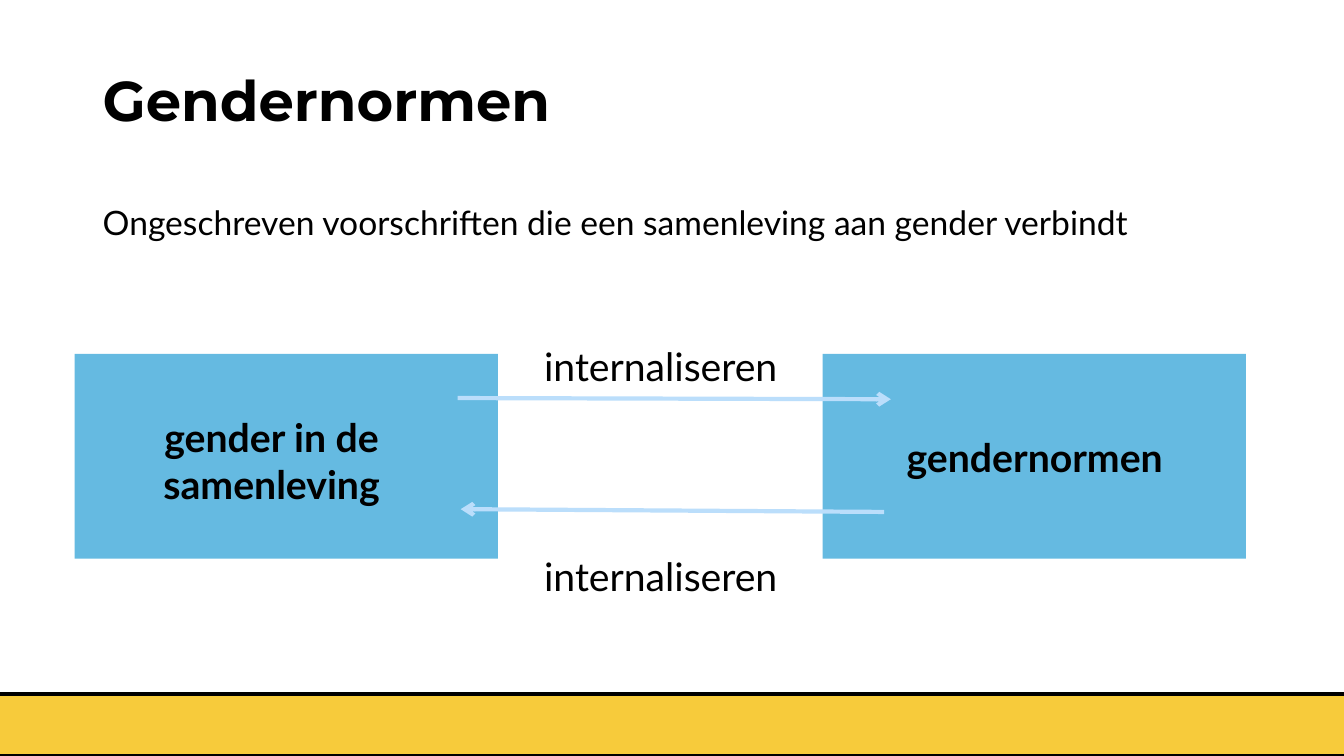
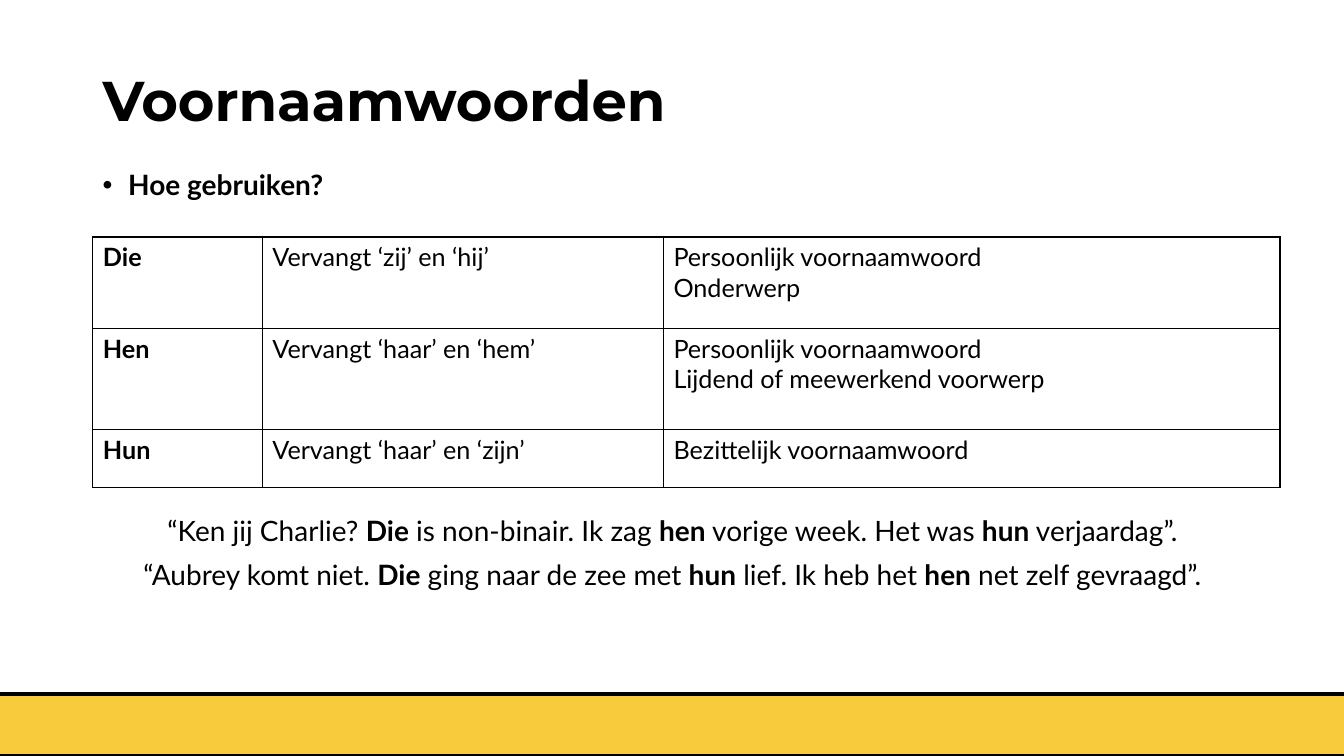
from lxml.etree import SubElement
from pptx import Presentation
from pptx.dml.color import RGBColor
from pptx.enum.shapes import MSO_CONNECTOR, MSO_SHAPE
from pptx.enum.text import MSO_ANCHOR, PP_ALIGN
from pptx.oxml.ns import qn
from pptx.util import Cm, Pt

THEME = {
    "black": RGBColor.from_string("000000"),
    "yellow": RGBColor.from_string("F7CB3B"),
    "blue": RGBColor.from_string("65BAE1"),
    "pale": RGBColor.from_string("BBDEFB"),
    "title": {"name": "Montserrat", "size": Pt(40), "bold": True},
    "lead": {"name": "Lato", "size": Pt(24), "bold": False},
    "body": {"name": "Lato", "size": Pt(20), "bold": False},
    "label": {"name": "Lato", "size": Pt(28), "bold": False},
    "cell": {"name": "Lato", "size": Pt(18), "bold": False},
}


def write(tf, lines, style, **paragraph_format):
    tf.word_wrap = True
    for i, line in enumerate(lines):
        p = tf.paragraphs[0] if i == 0 else tf.add_paragraph()
        for key, value in paragraph_format.items():
            if i or key != "space_before":
                setattr(p, key, value)
        for j, part in enumerate(line.split("*")):
            if part:
                r = p.add_run()
                r.text = part
                for key, value in THEME[style].items():
                    setattr(r.font, key, value)
                r.font.bold = THEME[style]["bold"] or j % 2 == 1
                r.font.color.rgb = THEME["black"]


def add_text(s, box, lines, style, anchor=MSO_ANCHOR.TOP, **paragraph_format):
    tf = s.shapes.add_textbox(*map(Cm, box)).text_frame
    tf.vertical_anchor = anchor
    write(tf, lines, style, **paragraph_format)
    return tf


prs = Presentation()
prs.slide_width, prs.slide_height = Cm(33.87), Cm(19.05)
left, width = 2.34, 29.21

slides = []
for title in ("Gendernormen", "Voornaamwoorden"):
    s = prs.slides.add_slide(prs.slide_layouts[6])
    band = s.shapes.add_shape(MSO_SHAPE.RECTANGLE, Cm(-0.94), Cm(17.48), Cm(35.74), Cm(1.57))
    band.shadow.inherit = False
    band.fill.solid()
    band.fill.fore_color.rgb = THEME["yellow"]
    band.line.color.rgb = THEME["black"]
    band.line.width = Pt(3)
    add_text(s, (left, 1.02, width, 3.18), [title], "title", MSO_ANCHOR.MIDDLE, line_spacing=0.9)
    slides.append(s)
norms, pronouns = slides

add_text(norms, (left, 5.08, width, 1.4),
         ["Ongeschreven voorschriften die een samenleving aan gender verbindt"],
         "lead", line_spacing=0.9)

for x in (1.88, 20.73):
    sp = norms.shapes.add_shape(MSO_SHAPE.RECTANGLE, Cm(x), Cm(8.92), Cm(10.67), Cm(5.16))
    sp.shadow.inherit = False
    sp.fill.solid()
    sp.fill.fore_color.rgb = THEME["blue"]
    sp.line.fill.background()

for x1, y1, x2, y2 in ((11.53, 10.03, 22.45, 10.06), (22.28, 12.9, 11.61, 12.83)):
    arrow = norms.shapes.add_connector(MSO_CONNECTOR.STRAIGHT, Cm(x1), Cm(y1), Cm(x2), Cm(y2))
    arrow.line.color.rgb = THEME["pale"]
    arrow.line.width = Pt(3)
    SubElement(arrow.line._get_or_add_ln(), qn("a:tailEnd"), type="arrow")
    SubElement(arrow._element.spPr, qn("a:effectLst"))

for box, text in (
    ((1.98, 10.29, 9.73, 2.64), "*gender in de samenleving*"),
    ((21.21, 10.8, 9.73, 1.45), "*gendernormen*"),
    ((12.93, 8.51, 7.44, 1.45), "internaliseren"),
    ((12.93, 13.79, 7.44, 1.45), "internaliseren"),
):
    add_text(norms, box, [text], "label", alignment=PP_ALIGN.CENTER)

tf = add_text(pronouns, (left, 4.19, width, 1.2), ["*Hoe gebruiken?*"], "body", line_spacing=0.9)
pPr = tf.paragraphs[0]._p.get_or_add_pPr()
pPr.set("marL", str(Cm(0.64)))
pPr.set("indent", str(Cm(-0.64)))
SubElement(pPr, qn("a:buFont"), typeface="Arial")
SubElement(pPr, qn("a:buChar"), char="•")

rows = [
    ("*Die*", "Vervangt ‘zij’ en ‘hij’", "Persoonlijk voornaamwoord\nOnderwerp"),
    ("*Hen*", "Vervangt ‘haar’ en ‘hem’", "Persoonlijk voornaamwoord\nLijdend of meewerkend voorwerp"),
    ("*Hun*", "Vervangt ‘haar’ en ‘zijn’", "Bezittelijk voornaamwoord"),
]
col_widths, row_heights = (4.27, 10.11, 15.54), (2.31, 2.54, 1.47)
table = pronouns.shapes.add_table(len(rows), len(col_widths), Cm(left), Cm(5.97),
                                  Cm(sum(col_widths)), Cm(sum(row_heights))).table
table.first_row = table.horz_banding = False
for column, w in zip(table.columns, col_widths):
    column.width = Cm(w)
for i, (values, h) in enumerate(zip(rows, row_heights)):
    table.rows[i].height = Cm(h)
    for j, value in enumerate(values):
        cell = table.cell(i, j)
        write(cell.text_frame, value.split("\n"), "cell")
        tcPr = cell._tc.get_or_add_tcPr()
        for side in ("a:lnL", "a:lnR", "a:lnT", "a:lnB"):
            ln = SubElement(tcPr, qn(side), w=str(Pt(1)))
            fill = SubElement(ln, qn("a:solidFill"))
            SubElement(fill, qn("a:srgbClr"), val=str(THEME["black"]))
        cell.fill.background()

add_text(pronouns, (left, 12.9, width, 2.4), [
    "“Ken jij Charlie? *Die* is non-binair. Ik zag *hen* vorige week. Het was *hun* verjaardag”.",
    "“Aubrey komt niet. *Die* ging naar de zee met *hun* lief. Ik heb het *hen* net zelf gevraagd”.",
], "body", alignment=PP_ALIGN.CENTER, line_spacing=0.9, space_before=Pt(10))

prs.save("out.pptx")
